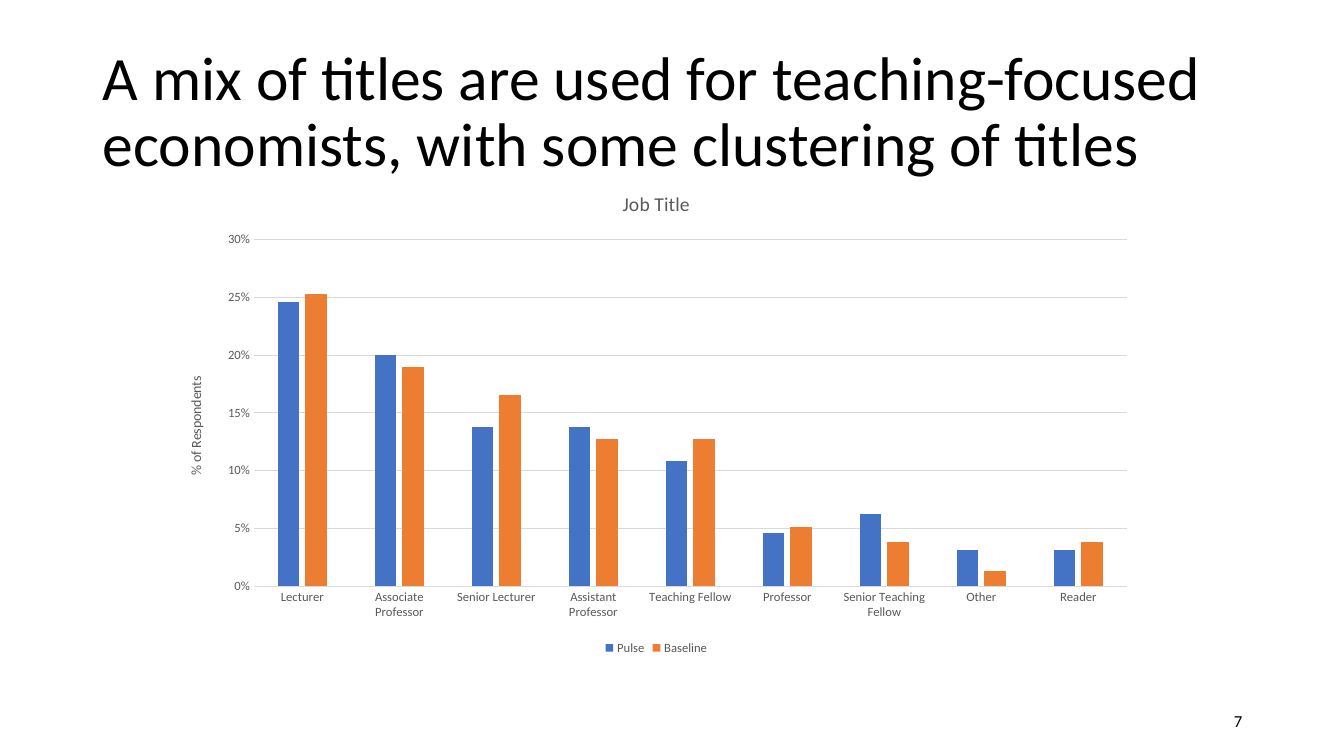
from pptx import Presentation
from pptx.chart.data import CategoryChartData
from pptx.dml.color import RGBColor
from pptx.enum.chart import XL_CHART_TYPE, XL_LEGEND_POSITION, XL_TICK_MARK
from pptx.enum.text import MSO_ANCHOR, PP_ALIGN
from pptx.util import Inches, Pt

GREY, GRID, FONT = "595959", "D9D9D9", "Calibri"


def rgb(code):
    return RGBColor.from_string(code)


def write(tf, text, size, color="000000", align=PP_ALIGN.LEFT, spacing=1.0):
    p = tf.paragraphs[0]
    p.alignment = align
    p.line_spacing = spacing
    r = p.add_run()
    r.text = text
    r.font.size = Pt(size)
    r.font.name = FONT
    r.font.bold = False
    r.font.color.rgb = rgb(color)


prs = Presentation()
prs.slide_width, prs.slide_height = Inches(13.33), Inches(7.5)
s = prs.slides.add_slide(prs.slide_layouts[6])

texts = [
    ((0.92, 0.4, 11.5, 1.45), "A mix of titles are used for teaching-focused "
     "economists, with some clustering of titles", dict(size=44, spacing=0.9)),
    ((9.42, 6.95, 3, 0.4), "7", dict(size=12, align=PP_ALIGN.RIGHT)),
]
for box, text, style in texts:
    tf = s.shapes.add_textbox(*map(Inches, box)).text_frame
    tf.word_wrap = True
    tf.vertical_anchor = MSO_ANCHOR.MIDDLE
    write(tf, text, **style)

data = CategoryChartData(number_format="0.0%")
data.categories = ["Lecturer", "Associate Professor", "Senior Lecturer",
                   "Assistant Professor", "Teaching Fellow", "Professor",
                   "Senior Teaching Fellow", "Other", "Reader"]
data.add_series("Pulse", [0.246, 0.2, 0.138, 0.138, 0.108, 0.046, 0.062, 0.031, 0.031])
data.add_series("Baseline", [0.253, 0.19, 0.165, 0.127, 0.127, 0.051, 0.038, 0.013, 0.038])
chart = s.shapes.add_chart(XL_CHART_TYPE.COLUMN_CLUSTERED,
                           *map(Inches, (1.65, 1.7, 9.72, 4.84)), data).chart
chart.font.size = Pt(10)
chart.font.name = FONT
chart.has_title = True
write(chart.chart_title.text_frame, "Job Title", 14, GREY, PP_ALIGN.CENTER)
chart.chart_title.include_in_layout = False

plot = chart.plots[0]
plot.gap_width, plot.overlap = 219, -27
plot.vary_by_categories = False
for series, color in zip(plot.series, ("4472C4", "ED7D31")):
    series.format.fill.solid()
    series.format.fill.fore_color.rgb = rgb(color)
    series.invert_if_negative = False

chart.has_legend = True
legend = chart.legend
legend.position = XL_LEGEND_POSITION.BOTTOM
legend.include_in_layout = False

cat, val = chart.category_axis, chart.value_axis
for axis in (cat, val):
    axis.major_tick_mark = axis.minor_tick_mark = XL_TICK_MARK.NONE
for part in (cat.tick_labels, val.tick_labels, legend):
    part.font.size = Pt(9)
    part.font.name = FONT
    part.font.color.rgb = rgb(GREY)

val.has_major_gridlines = True
for line in (cat.format.line, val.major_gridlines.format.line):
    line.color.rgb = rgb(GRID)
    line.width = Pt(0.75)
val.format.line.fill.background()
val.minimum_scale, val.maximum_scale, val.major_unit = 0, 0.3, 0.05
val.tick_labels.number_format = "0%"
val.tick_labels.number_format_is_linked = False
val.has_title = True
write(val.axis_title.text_frame, "% of Respondents", 10, GREY, PP_ALIGN.CENTER)
val.axis_title.text_frame._txBody.bodyPr.set("rot", "-5400000")

prs.save("out.pptx")
